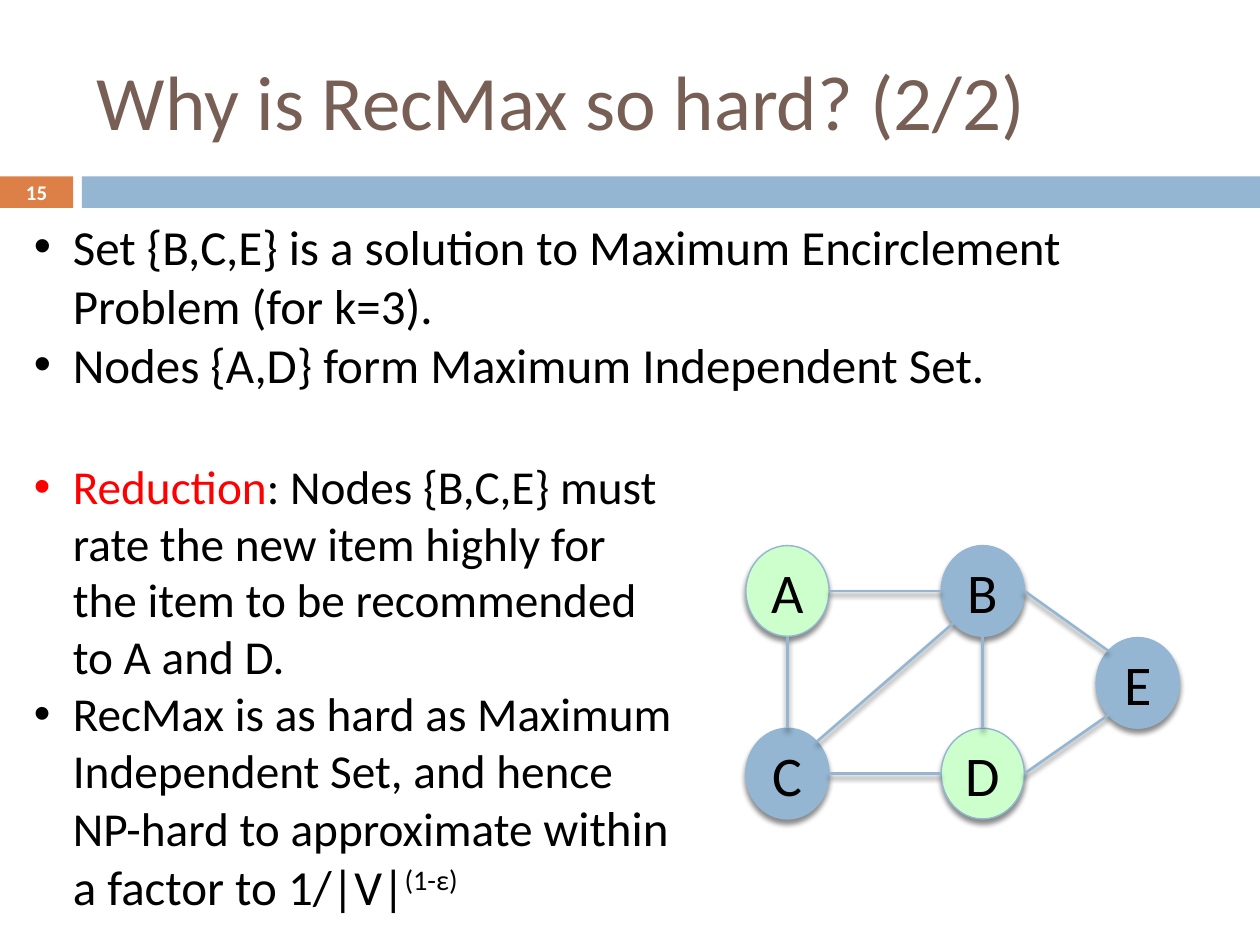
"""Build the slide on why RecMax is hard, with its five-node graph."""
from math import cos, radians, sin

from lxml import etree
from pptx import Presentation
from pptx.dml.color import RGBColor
from pptx.enum.shapes import MSO_CONNECTOR, MSO_SHAPE
from pptx.enum.text import MSO_ANCHOR as ANCHOR, PP_ALIGN as ALIGN
from pptx.oxml import parse_xml
from pptx.oxml.ns import qn
from pptx.util import Inches, Pt

COLORS = {
    name: RGBColor.from_string(value)
    for name, value in {
        "blue": "94B6D2", "orange": "DD8047", "green": "CCFFCC", "brown": "775F55",
        "black": "000000", "white": "FFFFFF", "red": "FF0000",
    }.items()
}
SHADOW = (
    '<a:effectLst xmlns:a="http://schemas.openxmlformats.org/drawingml/2006/main">'
    '<a:outerShdw blurRad="38100" dist="30480" dir="5400000" rotWithShape="0">'
    '<a:srgbClr val="000000"><a:alpha val="45000"/></a:srgbClr>'
    '</a:outerShdw></a:effectLst>'
)


def set_font(font, size, color, bold=False):
    font.name = "Calibri"
    font.size = Pt(size)
    font.bold = bold
    font.color.rgb = COLORS[color]


def add_text_box(page, left, top, width, height, anchor=ANCHOR.TOP):
    box = page.shapes.add_textbox(Inches(left), Inches(top), Inches(width), Inches(height))
    box.text_frame.word_wrap = True
    box.text_frame.vertical_anchor = anchor
    return box.text_frame


deck = Presentation()
deck.slide_width, deck.slide_height = Inches(10), Inches(7.5)
page = deck.slides.add_slide(deck.slide_layouts[6])

for left, width, color in [(0, 0.58, "orange"), (0.65, 9.35, "blue")]:
    band = page.shapes.add_shape(
        MSO_SHAPE.RECTANGLE, Inches(left), Inches(1.4), Inches(width), Inches(0.25)
    )
    band.shadow.inherit = False
    band.fill.solid()
    band.fill.fore_color.rgb = COLORS[color]
    band.line.fill.background()

title = add_text_box(page, 0.67, 0.25, 8.92, 1.08, ANCHOR.MIDDLE).paragraphs[0]
title.text = "Why is RecMax so hard? (2/2)"
set_font(title.font, 44, "brown")

number = add_text_box(page, 0, 1.39, 0.58, 0.27, ANCHOR.MIDDLE).paragraphs[0]
number.text = "15"
number.alignment = ALIGN.CENTER
set_font(number.font, 11.9, "white", bold=True)

NODE_WIDTH, NODE_HEIGHT = 0.66, 0.72
centers = {
    "A": (6.25, 4.69), "D": (7.8, 6.14), "B": (7.8, 4.69), "C": (6.25, 6.14), "E": (9.03, 5.42),
}
for name, (x, y) in centers.items():
    node = page.shapes.add_shape(
        MSO_SHAPE.OVAL, Inches(x - NODE_WIDTH / 2), Inches(y - NODE_HEIGHT / 2),
        Inches(NODE_WIDTH), Inches(NODE_HEIGHT),
    )
    node.fill.solid()
    node.fill.fore_color.rgb = COLORS["green" if name in "AD" else "blue"]
    node.line.color.rgb = COLORS["blue"]
    node.line.width = Pt(0.79)
    node._element.spPr.append(parse_xml(SHADOW))
    frame = node.text_frame
    frame.margin_left = frame.margin_right = 0
    frame.vertical_anchor = ANCHOR.MIDDLE
    label = frame.paragraphs[0]
    label.text = name
    label.alignment = ALIGN.CENTER
    set_font(label.font, 32, "black")

edges = [
    ("A", 0, "B", 180), ("A", 90, "C", 270), ("C", 0, "D", 180), ("C", 315, "B", 135),
    ("D", 0, "E", 135), ("B", 0, "E", 225), ("B", 90, "D", 270),
]
for start, start_angle, end, end_angle in edges:
    ends = []
    for name, angle in [(start, start_angle), (end, end_angle)]:
        x, y = centers[name]
        ends.append(Inches(x + NODE_WIDTH / 2 * cos(radians(angle))))
        ends.append(Inches(y + NODE_HEIGHT / 2 * sin(radians(angle))))
    edge = page.shapes.add_connector(MSO_CONNECTOR.STRAIGHT, *ends)
    edge.line.color.rgb = COLORS["blue"]
    edge.line.width = Pt(1.5)
    edge._element.spPr.append(parse_xml(SHADOW))

bullet_boxes = [
    ((0.17, 1.67, 9.42, 1.51), [
        [("Set {B,C,E} is a solution to Maximum Encirclement Problem (for k=3).", 28, "black", 0)],
        [("Nodes {A,D} form Maximum Independent Set.", 28, "black", 0)],
    ]),
    ((0.17, 3.58, 5.33, 3.77), [
        [("Reduction", 27, "red", 0),
         (": Nodes {B,C,E} must rate the new item highly for the item to be recommended "
          "to A and D.", 27, "black", 0)],
        [("RecMax is as hard as Maximum Independent Set, and hence NP-hard to approximate ",
          27, "black", 0),
         ("within a factor to 1/|V|", 28, "black", 0),
         ("(1-ε)", 28, "black", 30000)],
    ]),
]
for place, items in bullet_boxes:
    frame = add_text_box(page, *place)
    for index, spans in enumerate(items):
        para = frame.add_paragraph() if index else frame.paragraphs[0]
        properties = para._p.get_or_add_pPr()
        properties.set("marL", str(Inches(0.31)))
        properties.set("indent", str(-Inches(0.31)))
        etree.SubElement(properties, qn("a:buFont")).set("typeface", "Arial")
        etree.SubElement(properties, qn("a:buChar")).set("char", "•")
        for text, size, color, baseline in spans:
            span = para.add_run()
            span.text = text
            set_font(span.font, size, color)
            if baseline:
                span.font._element.set("baseline", str(baseline))

deck.save("out.pptx")
